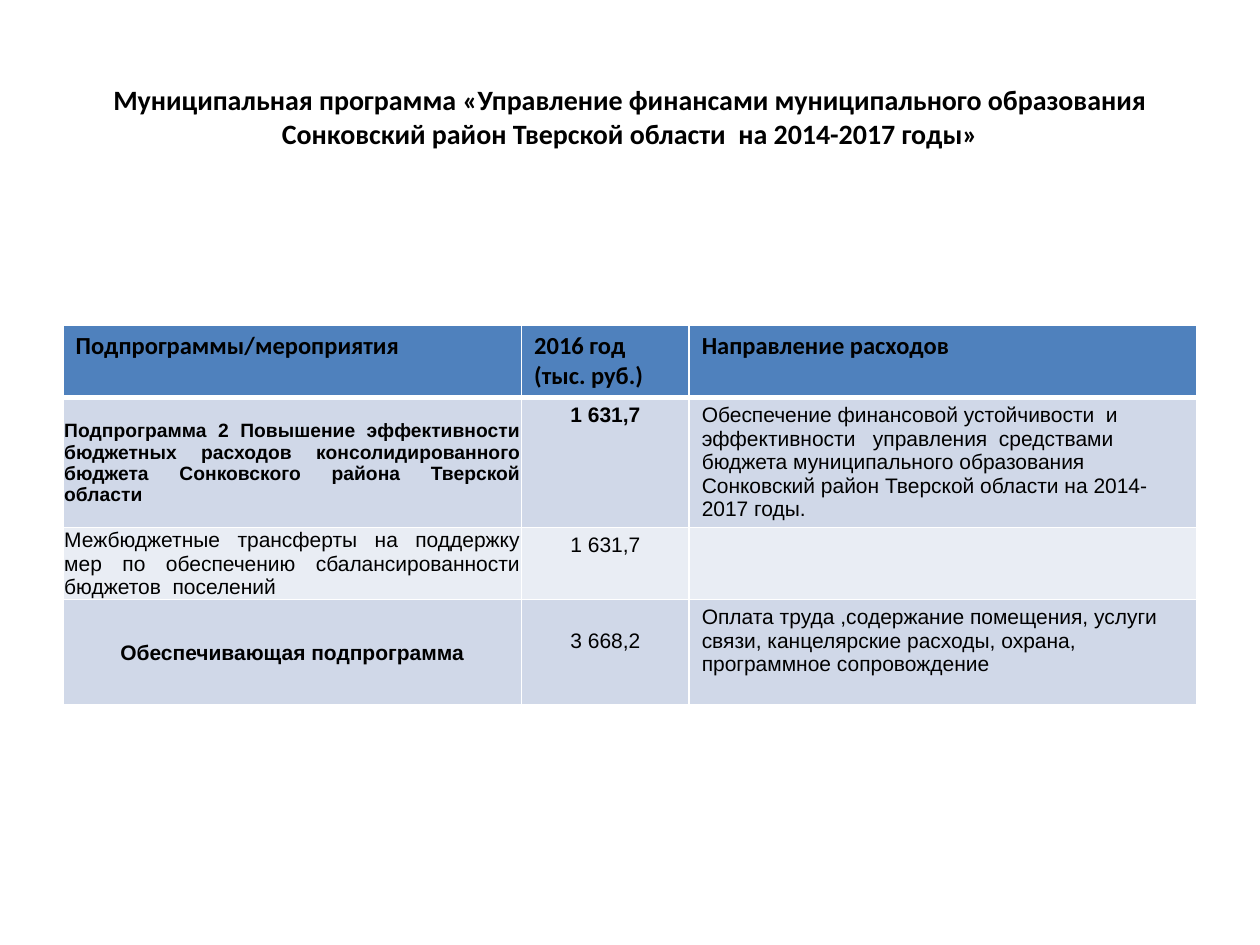
import pptx
import pptx.util
import pptx.dml.color
import pptx.enum.text
import pptx.oxml
import pptx.oxml.ns

ALIGN = pptx.enum.text.PP_ALIGN
ANCHOR = pptx.enum.text.MSO_ANCHOR
MARGIN = 0.05
COLUMN_WIDTHS = (3.64, 1.33, 4.03)
ROW_HEIGHTS = (0.57, 1.02, 0.57, 0.84)
ROW_FILLS = ("4F81BD", "D0D8E8", "E9EDF4", "D0D8E8")
TITLE = ("Муниципальная программа «Управление финансами муниципального образования "
         "Сонковский район Тверской области  на 2014-2017 годы»")
HEADINGS = ("Подпрограммы/мероприятия", "2016 год (тыс. руб.)", "Направление расходов")
ROWS = (
    ("Подпрограмма 2 Повышение эффективности бюджетных расходов "
     "консолидированного бюджета Сонковского района Тверской области",
     "1 631,7",
     "Обеспечение финансовой устойчивости  и эффективности   управления  средствами "
     "бюджета муниципального образования Сонковский район Тверской области на 2014-2017 годы."),
    ("Межбюджетные трансферты на поддержку мер по обеспечению "
     "сбалансированности бюджетов  поселений",
     "1 631,7", ""),
    ("Обеспечивающая подпрограмма",
     "3 668,2",
     "Оплата труда ,содержание помещения, услуги связи, канцелярские расходы, "
     "охрана, программное сопровождение"),
)


def color(value):
    """Turn a hex string into a colour."""
    return pptx.dml.color.RGBColor.from_string(value)


def write_text(frame, text, size, name="Arial", bold=False, align=ALIGN.LEFT):
    """Write one formatted paragraph into a text frame."""
    frame.text = text
    paragraph = frame.paragraphs[0]
    paragraph.alignment = align
    for font in [paragraph.font] + [run.font for run in paragraph.runs]:
        font.size = pptx.util.Pt(size)
        font.name = name
        font.bold = bold
        font.color.rgb = color("000000")


def set_borders(cell, top=1, bottom=1):
    """Draw white borders with the given top and bottom widths in points."""
    properties = cell._tc.get_or_add_tcPr()
    widths = {"lnL": 1, "lnR": 1, "lnT": top, "lnB": bottom}
    for index, (tag, width) in enumerate(widths.items()):
        properties.insert(index, pptx.oxml.parse_xml(
            f'<a:{tag} {pptx.oxml.ns.nsdecls("a")} w="{pptx.util.Pt(width)}">'
            f'<a:solidFill><a:srgbClr val="FFFFFF"/></a:solidFill></a:{tag}>'))


def add_title(slide):
    """Fill and place the title placeholder."""
    title = slide.shapes.title
    title.left, title.top, title.width, title.height = map(
        pptx.util.Inches, (0.5, 0.3, 9, 1.25))
    title.text_frame.vertical_anchor = ANCHOR.MIDDLE
    write_text(title.text_frame, TITLE, 16, "Calibri", True, ALIGN.CENTER)


def add_budget_table(slide):
    """Add the table frame with its column widths, row heights, fills and borders."""
    table = slide.shapes.add_table(
        len(ROW_HEIGHTS), len(COLUMN_WIDTHS),
        *map(pptx.util.Inches, (0.5, 2.58, sum(COLUMN_WIDTHS), sum(ROW_HEIGHTS)))).table
    for column, width in zip(table.columns, COLUMN_WIDTHS):
        column.width = pptx.util.Inches(width)
    for index, (row, height) in enumerate(zip(table.rows, ROW_HEIGHTS)):
        row.height = pptx.util.Inches(height)
        for cell in row.cells:
            cell.fill.solid()
            cell.fill.fore_color.rgb = color(ROW_FILLS[index])
            set_borders(cell, 3 if index == 1 else 1, 3 if index == 0 else 1)
    return table


def write_program_cell(cell, text, size, bold, align):
    """Write a programme name into a cell with almost no margins."""
    cell.vertical_anchor = ANCHOR.MIDDLE
    cell.margin_left = cell.margin_right = cell.margin_top = pptx.util.Inches(0.01)
    cell.margin_bottom = 0
    write_text(cell.text_frame, text, size, bold=bold, align=align)


def fill_table(table):
    """Write the headings and the budget rows."""
    for column, heading in enumerate(HEADINGS):
        write_text(table.cell(0, column).text_frame, heading, 14, "Calibri", True)
    program_styles = ((11, True, ALIGN.JUSTIFY), (12, False, ALIGN.JUSTIFY),
                      (12, True, ALIGN.CENTER))
    for index, ((program, amount, purpose), style) in enumerate(zip(ROWS, program_styles), 1):
        write_program_cell(table.cell(index, 0), program, *style)
        write_text(table.cell(index, 1).text_frame, amount, 12,
                   bold=index == 1, align=ALIGN.CENTER)
        write_text(table.cell(index, 2).text_frame, purpose, 12)
    table.cell(len(ROWS), 1).margin_top = pptx.util.Inches(MARGIN + 0.19)


def main():
    """Build and save the presentation."""
    presentation = pptx.Presentation()
    presentation.slide_width = pptx.util.Inches(10)
    presentation.slide_height = pptx.util.Inches(7.5)
    slide = presentation.slides.add_slide(presentation.slide_layouts[5])
    add_title(slide)
    fill_table(add_budget_table(slide))
    presentation.save("out.pptx")


if __name__ == "__main__":
    main()
